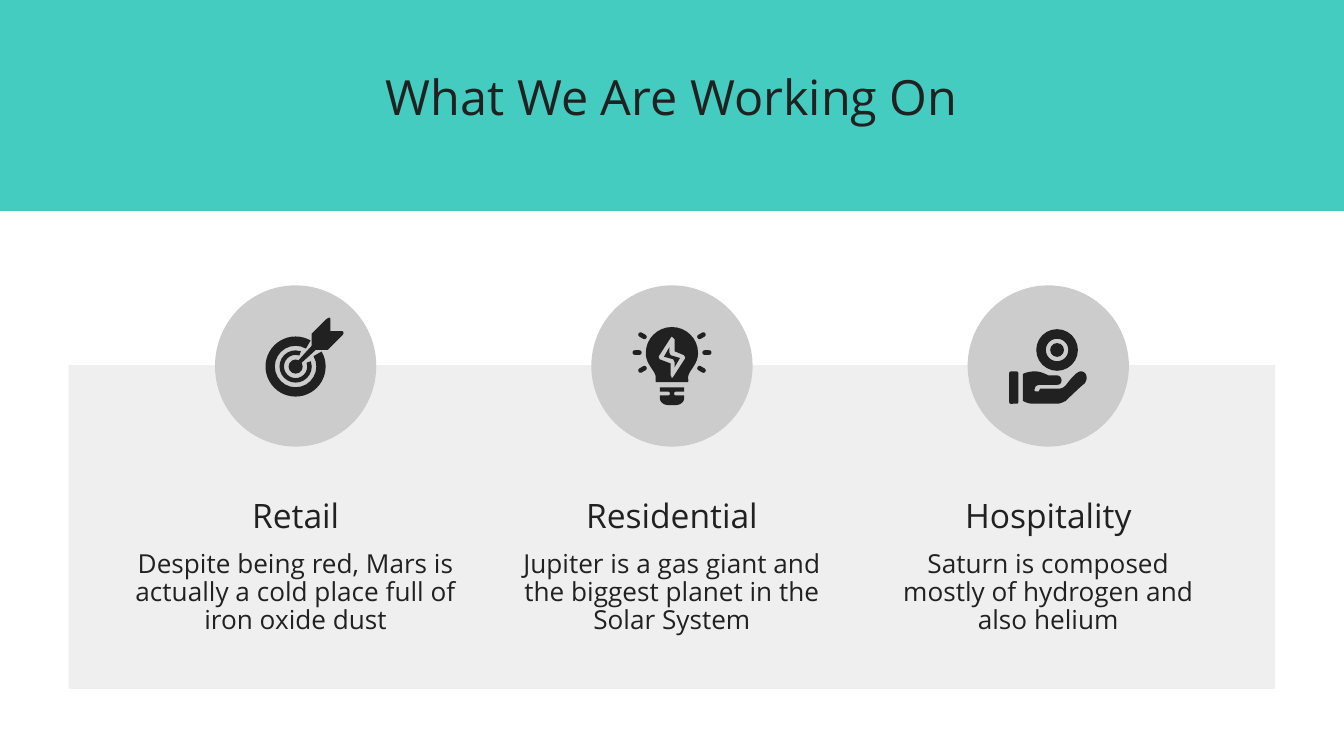
from pptx import Presentation
from pptx.dml.color import RGBColor
from pptx.enum import shapes as kinds, text as layout
from pptx.util import Pt

COLORS = {"band": "44CCC0", "panel": "EFEFEF", "disc": "CCCCCC", "ink": "212121"}
FONT = "Open Sans"
SHAPE = kinds.MSO_SHAPE
ANCHOR = layout.MSO_ANCHOR
CURVE_STEPS = 8

# Outlines are in points from the disc centre: pairs are corners,
# six numbers are the two controls and the end of a curve.
DART = [[(18, -25.9), (16.6, -25.2), (9.4, -18), (8.6, -17.3), (8.6, -10.8),
         (1.4, -2.9), (2.9, -1.4), (10.8, -8.6), (17.3, -8.6), (18, -9.4),
         (25.2, -16.6), (25.9, -17.3, 25.9, -18.7, 24.5, -18.7),
         (18.7, -18.7), (18.7, -24.5), (18.7, -25.2, 18.5, -25.9, 18, -25.9)]]
BULB = [
    [(0, -20.9), (-7.7, -20.9, -14, -14.7, -14, -7), (-14, -3, -12, -0.5, -10.8, 1.4),
     (-7.2, 6.5, -9.4, 6.5, -8.6, 8.6), (8.6, 8.6), (9.4, 6.5, 7.2, 6.5, 10.8, 1.4),
     (12, -0.5, 14, -3, 14, -7), (14, -14.7, 7.7, -20.9, 0, -20.9)],
    [(0, -15.8), (1.4, -14.4), (1.4, -7.9), (6.5, -5.8), (7.2, -4.3), (0.7, 5.8),
     (0, 6.5), (-0.7, 5), (-0.7, -1.4), (-6.5, -3.6), (-7.2, -5), (-0.7, -15.1)],
]
BOLT = [[(-1.4, -10.1), (-4.3, -5), (0.7, -3.6), (1.4, -2.2), (1.4, 0.7),
         (4.3, -4.3), (-0.7, -5.8), (-1.4, -7.2)]]
SOCKET = [[(-6.5, 11.5), (6.5, 11.5), (6.5, 13.7), (2.2, 13.7),
           (0.7, 13.7, 0.7, 15.8, 2.2, 15.8), (6.5, 15.8), (6.5, 17.3),
           (6.5, 19.4, 4.3, 20.9, 2.2, 20.9), (-2.2, 20.9),
           (-4.3, 20.9, -6.5, 19.4, -6.5, 17.3), (-6.5, 15.8), (-2.2, 15.8),
           (-0.7, 15.8, -0.7, 13.7, -2.2, 13.7), (-6.5, 13.7)]]
HAND = [[(-7.2, 2.9), (-10.1, 2.9, -12.2, 3.6, -13.7, 4.3), (-13.7, 18.7),
         (-12.2, 19.4, -10.8, 20.2, -8.6, 20.2), (5, 20.2),
         (6.5, 20.2, 7.9, 19.4, 9.4, 18.7), (9.4, 18.7, 16.6, 11.5, 19.4, 9.4),
         (19.4, 9.4, 20.5, 7.9, 20.5, 6.5), (20.5, 4.3, 19.4, 2.9, 17.3, 2.9),
         (16.6, 2.9, 14.4, 3.6, 10.1, 9.4), (8.6, 11.5, 7.2, 12.2, 5, 12.2),
         (-4.3, 12.2), (-4.3, 12.2, -5, 13, -5, 13.7), (-6.5, 13.7),
         (-7.2, 13.7, -7.9, 13, -7.2, 12.2), (-7.2, 10.8, -5.8, 10.1, -4.3, 10.1),
         (5, 10.1), (7.9, 10.1, 7.9, 5, 4.3, 5), (0, 5),
         (-2.9, 3.6, -5, 2.9, -7.2, 2.9)]]


def paint(shape, color):
    shape.shadow.inherit = False
    shape.fill.solid()
    shape.fill.fore_color.rgb = RGBColor.from_string(COLORS[color])
    shape.line.fill.background()


def add_block(shapes, kind, box, color, adjustments=(), rotation=0):
    shape = shapes.add_shape(kind, *map(Pt, box))
    for index, value in enumerate(adjustments):
        shape.adjustments[index] = value
    shape.rotation = rotation
    paint(shape, color)


def add_text(slide, box, words, size, anchor=ANCHOR.TOP, spacing=1.0):
    frame = slide.shapes.add_textbox(*map(Pt, box)).text_frame
    frame_format = {"word_wrap": True, "vertical_anchor": anchor}
    for side in ("left", "top", "right", "bottom"):
        frame_format[f"margin_{side}"] = Pt(7.2)
    for name, value in frame_format.items():
        setattr(frame, name, value)
    paragraph = frame.paragraphs[0]
    paragraph.alignment = layout.PP_ALIGN.CENTER
    paragraph.line_spacing = spacing
    run = paragraph.add_run()
    run.text = words
    for name, value in {"name": FONT, "size": Pt(size)}.items():
        setattr(run.font, name, value)
    run.font.color.rgb = RGBColor.from_string(COLORS["ink"])


def flatten(contour):
    """Turn corners and cubic curves into a list of points."""
    points = [contour[0]]
    for step in contour[1:]:
        if len(step) == 2:
            points.append(step)
            continue
        controls = [points[-1], step[:2], step[2:4], step[4:]]
        for number in range(1, CURVE_STEPS + 1):
            t = number / CURVE_STEPS
            weights = ((1 - t) ** 3, 3 * t * (1 - t) ** 2, 3 * t * t * (1 - t), t ** 3)
            points.append(tuple(sum(w * c[axis] for w, c in zip(weights, controls))
                                for axis in (0, 1)))
    return points


def add_outline(shapes, center, contours):
    builder = None
    for contour in contours:
        points = [tuple(Pt(c + p) for c, p in zip(center, point))
                  for point in flatten(contour)]
        if builder is None:
            builder = shapes.build_freeform(*points[0])
        else:
            builder.move_to(*points[0])
        builder.add_line_segments(points[1:], close=True)
    paint(builder.convert_to_shape(), "ink")


def add_part(shapes, kind, center, offset, size, adjustments=(), rotation=0):
    """Place an icon part by the offset of its middle from the disc centre."""
    box = [c + o - s / 2 for c, o, s in zip(center, offset, size)]
    add_block(shapes, kind, (*box, *size), "ink", adjustments, rotation)


def draw_target(shapes, center):
    middle = (0, 0.3)
    for diameter, gap, thickness in ((32.2, 15, 0.155), (17.3, 26, 0.14)):
        # Angles are measured clockwise, with the gap centred on 315 degrees.
        start, end = (315 + gap) * 0.6, (315 - gap) * 0.6
        add_part(shapes, SHAPE.BLOCK_ARC, center, middle, (diameter, diameter),
                 (start, end, thickness))
    add_part(shapes, SHAPE.OVAL, center, middle, (7.6, 7.6))
    add_outline(shapes, center, DART)


def draw_bulb(shapes, center):
    for side in (-1, 1):
        for x, y, angle in ((18.7, -7.2, 0), (15.8, -16.2, -30), (15.8, 1.8, 30)):
            add_part(shapes, SHAPE.ROUNDED_RECTANGLE, center, (side * x, y),
                     (4.9, 2.5), (0.5,), side * angle)
    for outline in (BULB, BOLT, SOCKET):
        add_outline(shapes, center, outline)


def draw_coin_in_hand(shapes, center):
    coin = (4.7, -8.6)
    add_part(shapes, SHAPE.OVAL, center, coin, (7.4, 7.4))
    add_part(shapes, SHAPE.DONUT, center, coin, (22.3, 22.3), (0.23,))
    add_part(shapes, SHAPE.ROUNDED_RECTANGLE, center, (-18.5, 11.6), (4.9, 17.3), (0.17,))
    add_outline(shapes, center, HAND)


def add_header(slide, box):
    add_block(slide.shapes, SHAPE.RECTANGLE, box, "band")
    add_text(slide, (142.6, 31, 434.9, 35.3), "What We Are Working On", 26, spacing=0.95)


def add_sector(slide, box, name, description, draw_icon):
    left, top, width, _ = box
    middle, disc = left + width / 2, 86.4
    add_block(slide.shapes, SHAPE.OVAL, (middle - disc / 2, top, disc, disc), "disc")
    draw_icon(slide.shapes.add_group_shape().shapes, (middle, top + disc / 2))
    add_text(slide, (left, top + 105.8, width, 35.3), name, 18, ANCHOR.BOTTOM)
    add_text(slide, (left, top + 135.4, width, 49), description, 14, spacing=0.89)


def main():
    presentation = Presentation()
    presentation.slide_width, presentation.slide_height = Pt(720), Pt(405)
    slide = presentation.slides.add_slide(presentation.slide_layouts[6])
    add_block(slide.shapes, SHAPE.RECTANGLE, (36.8, 195.6, 646.4, 173.5), "panel")
    add_header(slide, (-6.5, -5, 731.5, 118))
    sectors = (
        ("Retail", "Despite being red, Mars is actually a cold place full of iron oxide dust",
         draw_target),
        ("Residential", "Jupiter is a gas giant and the biggest planet in the Solar System",
         draw_bulb),
        ("Hospitality", "Saturn is composed mostly of hydrogen and also helium",
         draw_coin_in_hand),
    )
    width, pitch = 189.4, 201.6
    first = 360 - pitch - width / 2
    for column, sector in enumerate(sectors):
        add_sector(slide, (first + column * pitch, 152.9, width, 184.4), *sector)
    presentation.save("out.pptx")


if __name__ == "__main__":
    main()
